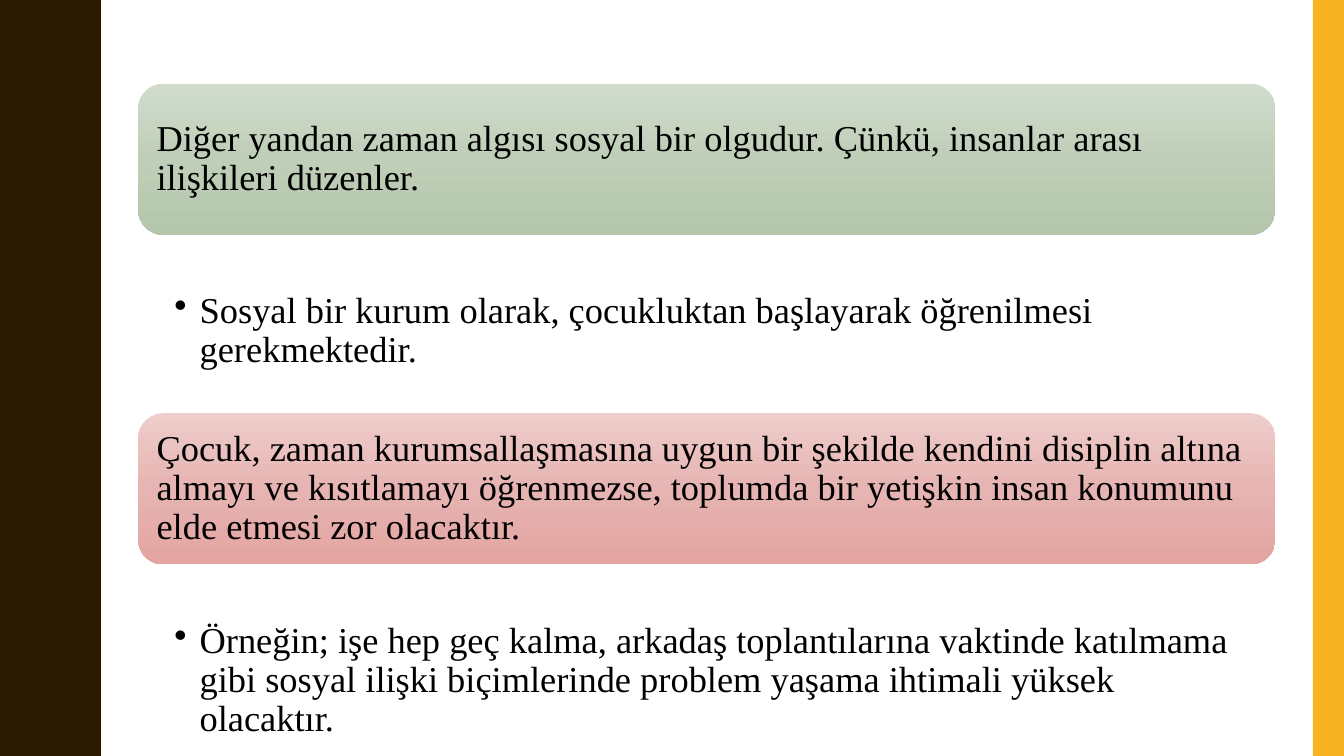
from copy import deepcopy
from pptx import Presentation
from pptx.dml.color import RGBColor
from pptx.enum.shapes import MSO_SHAPE as Kind
from pptx.enum.text import MSO_ANCHOR as Anchor, PP_ALIGN as Align
from pptx.oxml.ns import qn
from pptx.oxml.xmlchemy import OxmlElement
from pptx.util import Inches, Pt

WIDE, HIGH = 13.33, 7.5
FONT, SIZE, INK = "Times New Roman", 26, "000000"
BROWN, GOLD = "2A1A00", "F8B323"
TOPICS = [
    ("Diğer yandan zaman algısı sosyal bir olgudur. Çünkü, insanlar arası ilişkileri düzenler.",
     ("D1DCCD", "BFCEB8", "B3C6AB"),
     "Sosyal bir kurum olarak, çocukluktan başlayarak öğrenilmesi gerekmektedir.", 1.77),
    ("Çocuk, zaman kurumsallaşmasına uygun bir şekilde kendini disiplin altına almayı ve kısıtlamayı "
     "öğrenmezse, toplumda bir yetişkin insan konumunu elde etmesi zor olacaktır.",
     ("EECDCB", "E6B4B2", "E4A4A1"),
     "Örneğin; işe hep geç kalma, arkadaş toplantılarına vaktinde katılmama gibi sosyal ilişki "
     "biçimlerinde problem yaşama ihtimali yüksek olacaktır.", 1.25),
]
LEFT, TOP, WIDTH, BAR = 1.37, 0.83, 11.28, 1.5
WAVE = 1.5
CURVE = [(0.78, 0), (0.78, 0.07), (0.79, 0.14), (0.8, 0.2), (0.81, 0.25), (0.83, 0.29),
         (0.85, 0.33), (0.87, 0.38), (0.89, 0.42), (0.91, 0.46), (0.93, 0.5),
         (0.95, 0.55), (0.96, 0.61), (0.97, 0.68), (0.97, 0.75)]


def color(code):
    return RGBColor.from_string(code)


def paint(shape, code):
    shape.shadow.inherit = False
    shape.fill.solid()
    shape.fill.fore_color.rgb = color(code)
    shape.line.fill.background()


def blend(shape, codes):
    shape.shadow.inherit = False
    shape.line.fill.background()
    shape.fill.gradient()
    shape.fill.gradient_angle = 270
    stops = shape._element.spPr.find(".//" + qn("a:gsLst"))
    stops.insert(1, deepcopy(stops[0]))
    for i, (stop, code) in enumerate(zip(shape.fill.gradient_stops, codes)):
        stop.position = i / 2
        stop.color.rgb = color(code)


def write(shape, text, insets, anchor):
    frame = shape.text_frame
    frame.text = text
    frame.word_wrap = True
    frame.vertical_anchor = anchor
    (frame.margin_left, frame.margin_top,
     frame.margin_right, frame.margin_bottom) = map(Inches, insets)
    para = frame.paragraphs[0]
    para.alignment = Align.LEFT
    para.line_spacing = 0.9
    font = para.runs[0].font
    font.name, font.size = FONT, Pt(SIZE)
    font.color.rgb = color(INK)
    return para


def bullet(para):
    props = para._p.get_or_add_pPr()
    props.set("marL", str(Inches(0.25)))
    props.set("indent", str(Inches(-0.25)))
    mark = OxmlElement("a:buChar")
    mark.set("char", "•")
    props.append(mark)


deck = Presentation()
deck.slide_width, deck.slide_height = Inches(WIDE), Inches(HIGH)
slide = deck.slides.add_slide(deck.slide_layouts[6])
shapes = slide.shapes

cycle = CURVE + [(x, WAVE - y) for x, y in CURVE[-2::-1]]
edge = [(x, y + n * WAVE) for n in range(round(HIGH / WAVE)) for x, y in cycle]
pen = shapes.build_freeform(0, 0, scale=Inches(1))
pen.add_line_segments(edge + [(0, HIGH)], close=True)
paint(pen.convert_to_shape(), BROWN)
paint(shapes.add_shape(Kind.RECTANGLE, Inches(13.02), 0, Inches(0.31), Inches(HIGH)), GOLD)

top = TOP
for title, codes, detail, depth in TOPICS:
    bar = shapes.add_shape(Kind.ROUNDED_RECTANGLE, Inches(LEFT), Inches(top),
                           Inches(WIDTH), Inches(BAR))
    blend(bar, codes)
    write(bar, title, (0.11, 0.11, 0.11, 0.11), Anchor.MIDDLE)
    top += BAR
    box = shapes.add_textbox(Inches(LEFT), Inches(top), Inches(WIDTH), Inches(depth))
    bullet(write(box, detail, (0.36, 0.57, 0.2, 0.04), Anchor.TOP))
    top += depth

deck.save("out.pptx")
